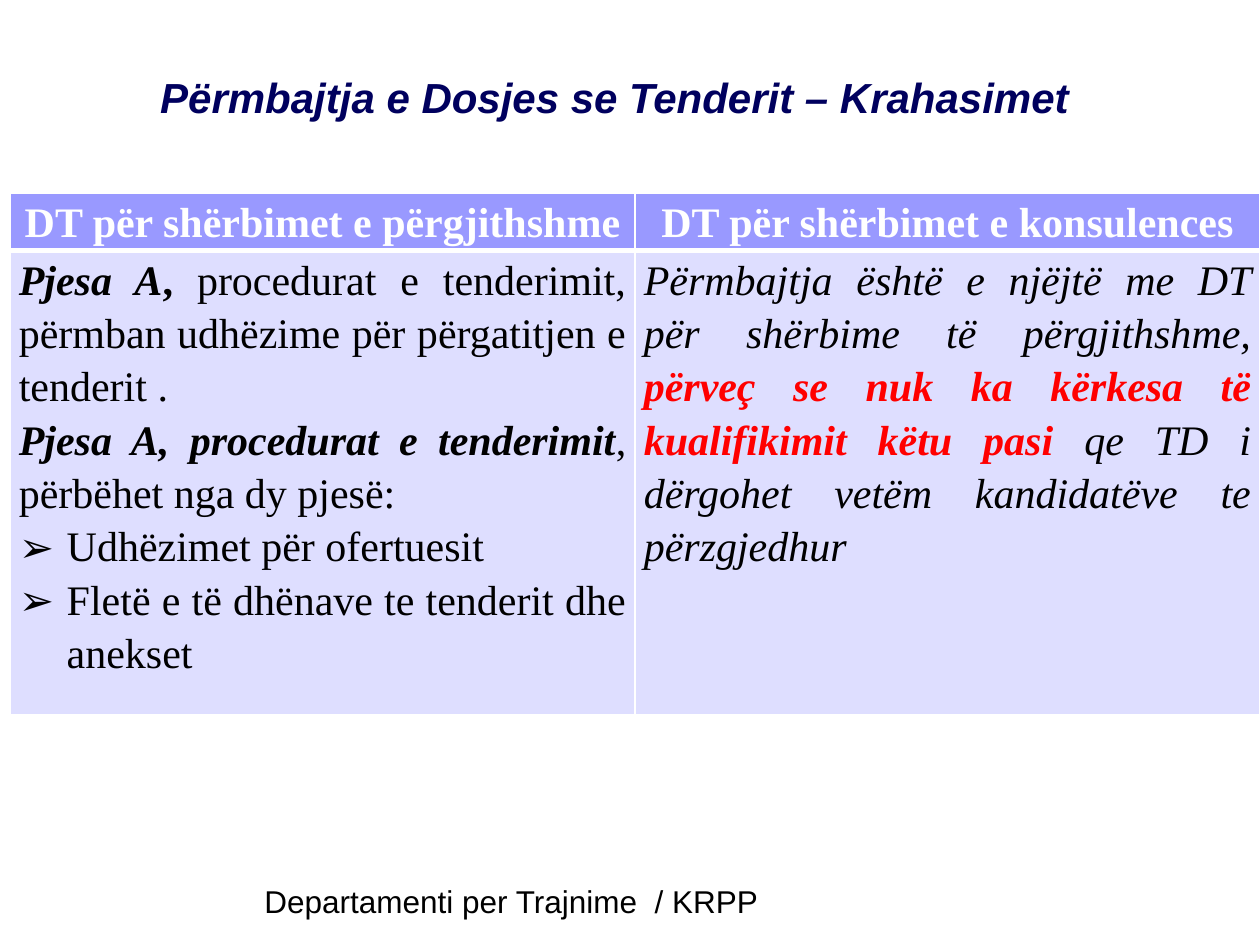
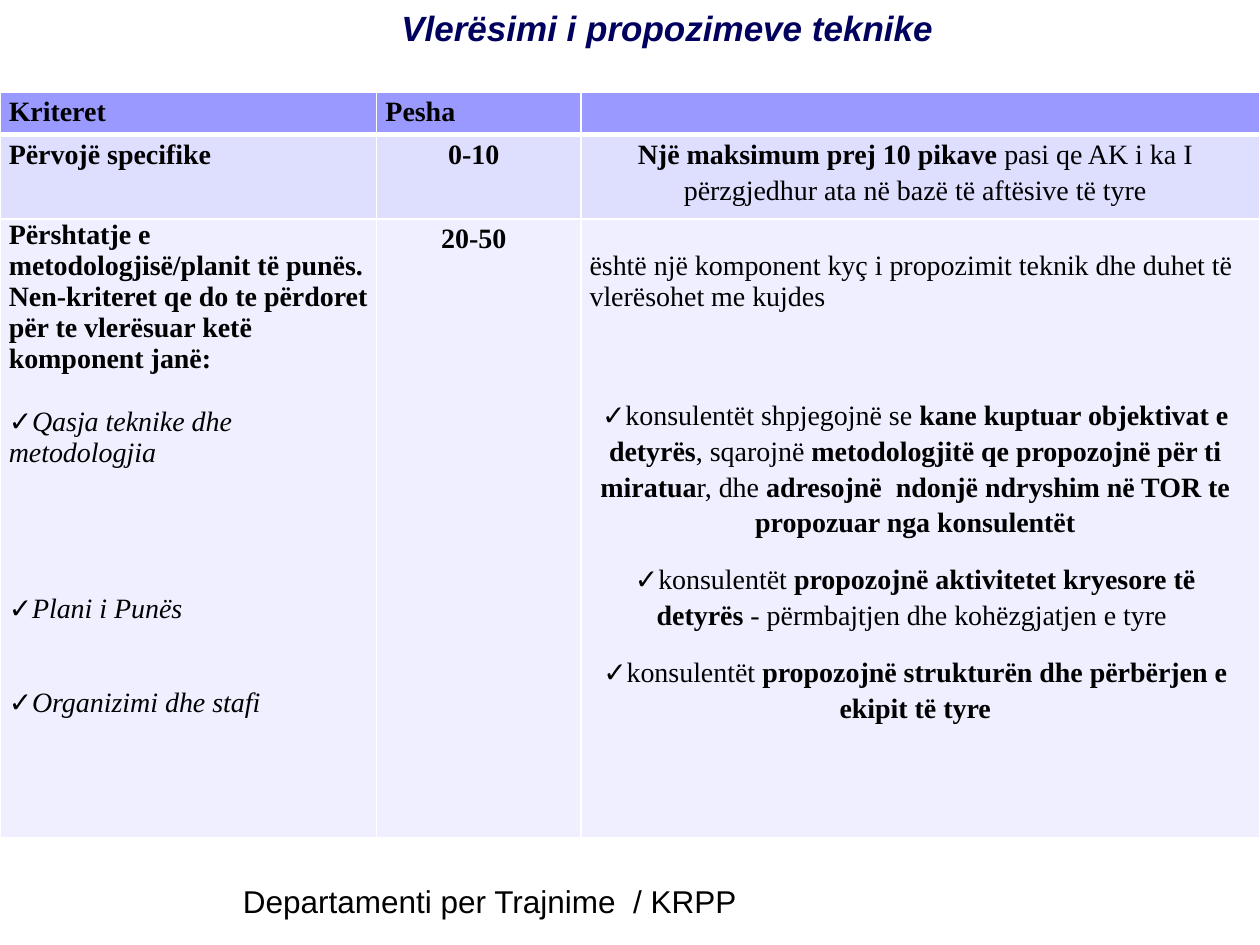
from dataclasses import dataclass

from lxml.etree import SubElement
from pptx import Presentation
from pptx.dml.color import RGBColor
from pptx.enum.text import PP_ALIGN
from pptx.oxml.ns import qn
from pptx.util import Pt

PX = 9144  # EMU in one px, 100 px to the inch


@dataclass(frozen=True)
class Theme:
    heading_font: str = "Arial"
    table_font: str = "Times New Roman"
    navy: str = "00005E"
    black: str = "000000"
    white: str = "FFFFFF"
    red: str = "FF0000"
    header: str = "9999FF"
    band: str = "DEDEFF"
    light_band: str = "EFEFFF"
    large: int = 24
    medium: int = 20
    footer: int = 18
    small: int = 16


T = Theme()
ALIGN = {"l": PP_ALIGN.LEFT, "c": PP_ALIGN.CENTER, "j": PP_ALIGN.JUSTIFY}


@dataclass
class Para:
    """A paragraph; each run is a (text, format) pair."""
    runs: list
    align: str = "l"
    line: float = 1.15
    before: float = 0
    bullet: str = ""
    indent: int = 0


@dataclass
class Cell:
    paras: list
    top: int = 0
    right: int = 7


def one(text, align="l", **fmt):
    return Para([(text, fmt)], align)


def add_run(p, text, size, font, color=T.black, bold=False, italic=False):
    r = p.add_run()
    r.text = text
    r.font.size = Pt(size)
    r.font.name = font
    r.font.bold = bold
    r.font.italic = italic
    r.font.color.rgb = RGBColor.from_string(color)


def add_bullet(p, char, indent):
    pPr = p._p.get_or_add_pPr()
    pPr.set("marL", str(indent * PX))
    pPr.set("indent", str(-indent * PX))
    SubElement(pPr, qn("a:buFont"), typeface=T.heading_font)
    SubElement(pPr, qn("a:buChar"), char=char)


def add_borders(cell, bottom=1):
    """Draw white cell borders; they must stand before the fill."""
    tcPr = cell._tc.get_or_add_tcPr()
    for i, side in enumerate("LRTB"):
        width = Pt(bottom if side == "B" else 1)
        ln = SubElement(tcPr, qn(f"a:ln{side}"), w=str(width))
        fill = SubElement(ln, qn("a:solidFill"))
        SubElement(fill, qn("a:srgbClr"), val=T.white)
        tcPr.insert(i, ln)


class Deck:
    def __init__(self):
        self.prs = Presentation()
        self.prs.slide_width, self.prs.slide_height = 1000 * PX, 750 * PX
        self.s = None

    def slide(self):
        self.s = self.prs.slides.add_slide(self.prs.slide_layouts[6])

    def fill_text(self, tf, paras, **base):
        tf.word_wrap = True
        for i, para in enumerate(paras):
            p = tf.add_paragraph() if i else tf.paragraphs[0]
            p.alignment = ALIGN[para.align]
            p.line_spacing = para.line
            if para.before:
                p.space_before = Pt(para.before)
            if para.bullet:
                add_bullet(p, para.bullet, para.indent)
            for text, fmt in para.runs:
                add_run(p, text, **{**base, **fmt})

    def text(self, box, text, align="l", **fmt):
        sp = self.s.shapes.add_textbox(*(n * PX for n in box))
        para = Para([(text, {})], align, line=1.0)
        self.fill_text(sp.text_frame, [para], font=T.heading_font, **fmt)

    def title(self, box, text, size):
        self.text(box, text, "c", size=size, color=T.navy,
                  bold=True, italic=True)

    def footer(self, left):
        self.text((left, 695, 475, 40), "Departamenti per Trajnime  / KRPP",
                  size=T.footer)

    def table(self, left, top, widths, heights, rows, fills, size):
        frame = self.s.shapes.add_table(
            len(rows), len(widths), left * PX, top * PX,
            sum(widths) * PX, sum(heights) * PX)
        tbl = frame.table
        tbl.first_row = tbl.horz_banding = False
        for col, width in zip(tbl.columns, widths):
            col.width = width * PX
        for i, (row, height) in enumerate(zip(rows, heights)):
            tbl.rows[i].height = height * PX
            for j, content in enumerate(row):
                cell = tbl.cell(i, j)
                cell.margin_left, cell.margin_right = 7 * PX, content.right * PX
                cell.margin_top, cell.margin_bottom = content.top * PX, 0
                cell.fill.solid()
                cell.fill.fore_color.rgb = RGBColor.from_string(fills[i])
                add_borders(cell, bottom=1 if i else 3)
                self.fill_text(cell.text_frame, content.paras,
                               size=size, font=T.table_font)


B = {"bold": True}
I = {"italic": True}
BI = {**B, **I}


def comparison_slide(deck):
    deck.slide()
    deck.title((51, 52, 883, 101),
               "Përmbajtja e Dosjes se Tenderit – Krahasimet ", T.large)
    header = [Cell([one(f"DT për shërbimet e {kind}", "c",
                        color=T.white, bold=True)])
              for kind in ("përgjithshme", "konsulences")]
    parts = [
        Para([("Pjesa A", BI), (",", B),
              (" procedurat e tenderimit, përmban udhëzime për përgatitjen "
               "e tenderit .", {})], "j"),
        Para([("Pjesa A, procedurat e tenderimit", BI),
              (", përbëhet nga dy pjesë: ", {})], "j"),
    ]
    parts += [Para([(text, {})], "j", bullet="➢", indent=38)
              for text in ("Udhëzimet për ofertuesit ",
                           "Fletë e të dhënave te tenderit dhe anekset")]
    consulting = Para([
        ("Përmbajtja është e njëjtë me DT për shërbime të përgjithshme, ", I),
        ("përveç se nuk ka kërkesa të kualifikimit këtu pasi",
         {**BI, "color": T.red}),
        (" qe TD i dërgohet vetëm kandidatëve te përzgjedhur", I)], "j")
    deck.table(8, 153, [496, 496], [41, 339],
               [header, [Cell(parts), Cell([consulting])]],
               [T.header, T.band], T.large)
    deck.footer(200)


def evaluation_slide(deck):
    deck.slide()
    header = [Cell([one("Kriteret", **B)]), Cell([one("Pesha", **B)]), Cell([])]
    experience = [
        Cell([one("Përvojë specifike", **B)]),
        Cell([one("0-10", "c", **B)], right=15),
        Cell([Para([("Një maksimum prej 10 pikave ", B),
                    ("pasi qe AK i ka I përzgjedhur ata në bazë të aftësive "
                     "të tyre", {})], "c")], right=15),
    ]
    criteria = [Para([("Përshtatje e metodologjisë/planit të punës. "
                       "Nen-kriteret qe do te përdoret për te vlerësuar ketë "
                       "komponent janë:", B)], line=1.0)]
    criteria += [Para([(text, I)], line=1.0, before=before, bullet="✓")
                 for text, before in (("Qasja teknike dhe metodologjia", 18),
                                      ("Plani i Punës", 71.5),
                                      ("Organizimi dhe stafi", 36))]
    guidance = [Para([("është një komponent kyç i propozimit teknik dhe duhet "
                       "të vlerësohet me kujdes", {})], line=1.0)]
    checks = [
        [("konsulentët shpjegojnë se ", {}),
         ("kane kuptuar objektivat e detyrës", B),
         (", sqarojnë ", {}),
         ("metodologjitë qe propozojnë për ti miratua", B),
         ("r, dhe ", {}),
         ("adresojnë  ndonjë ndryshim në TOR te propozuar nga konsulentët", B)],
        [("konsulentët ", {}),
         ("propozojnë aktivitetet kryesore të detyrës ", B),
         ("- përmbajtjen dhe kohëzgjatjen e tyre ", {})],
        [("konsulentët ", {}),
         ("propozojnë strukturën dhe përbërjen e ekipit të tyre", B)],
    ]
    guidance += [Para(runs, "c", before=12 if i else 47.5, bullet="✓")
                 for i, runs in enumerate(checks)]
    methodology = [Cell(criteria),
                   Cell([one("20-50", "c", **B)], right=15),
                   Cell(guidance, top=25, right=15)]
    deck.table(0, 73, [299, 162, 539], [34, 67, 491],
               [header, experience, methodology],
               [T.header, T.band, T.light_band], T.small)
    deck.title((117, 0, 833, 73), "Vlerësimi i propozimeve teknike ", T.medium)
    deck.footer(183)


def main():
    deck = Deck()
    comparison_slide(deck)
    evaluation_slide(deck)
    deck.prs.save("out.pptx")


if __name__ == "__main__":
    main()
